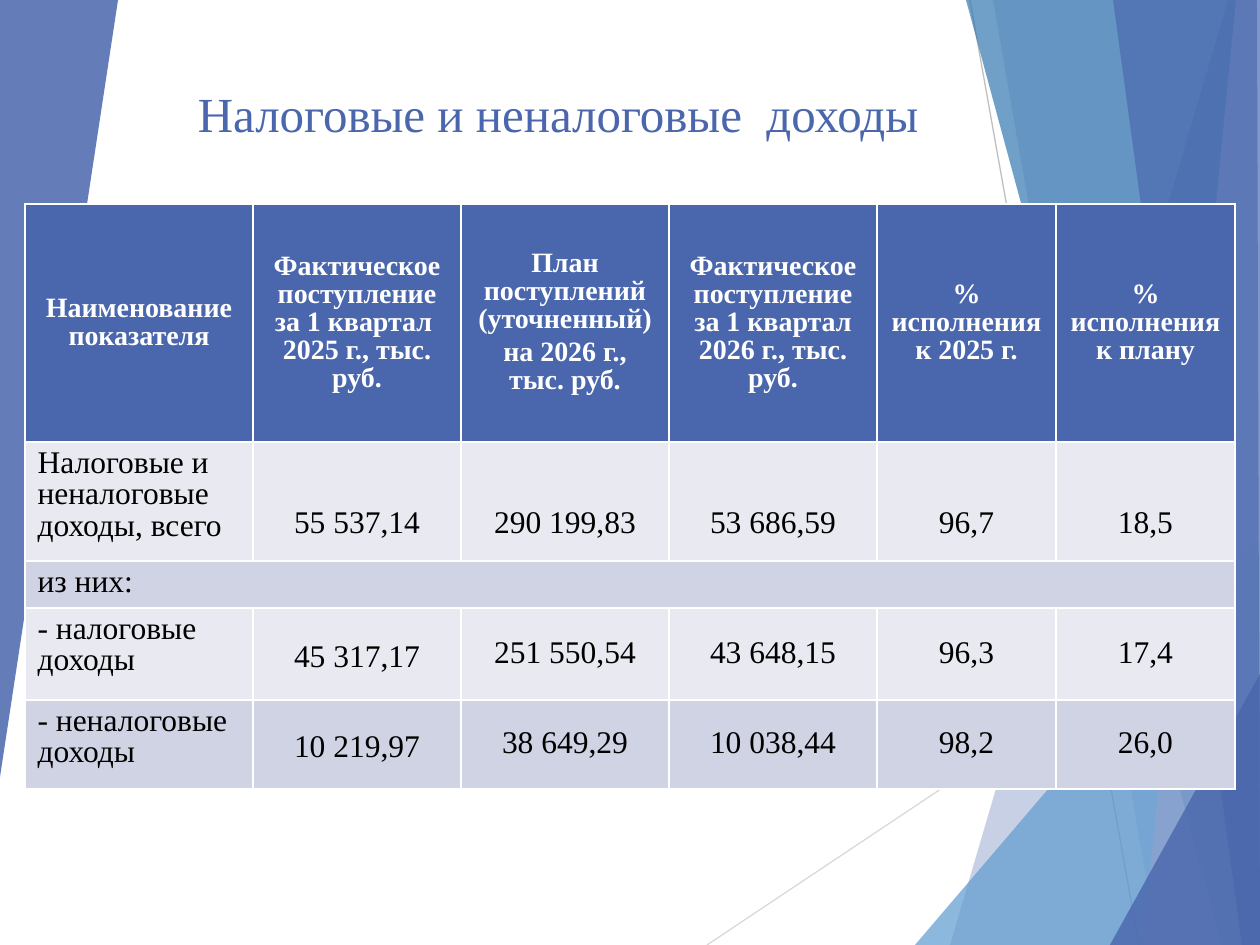
from dataclasses import dataclass

from lxml.etree import SubElement
from pptx import Presentation
from pptx.dml.color import RGBColor
from pptx.enum.shapes import MSO_CONNECTOR
from pptx.enum.text import MSO_ANCHOR, PP_ALIGN
from pptx.oxml.ns import qn
from pptx.slide import Slide
from pptx.table import _Cell
from pptx.text.text import TextFrame
from pptx.util import Emu, Pt

EMU_PER_PX = 914400 / 126
WIDTH, HEIGHT = 1260, 945
FONT = "Times New Roman"

WHITE = RGBColor(0xFF, 0xFF, 0xFF)
BLACK = RGBColor(0x00, 0x00, 0x00)
INDIGO = RGBColor(0x4A, 0x66, 0xAC)
SKY = RGBColor(0x62, 0x9D, 0xD1)
TEAL = RGBColor(0x34, 0x77, 0xB2)
LAVENDER = RGBColor(0x90, 0xA2, 0xCF)
LIGHT_GREY = RGBColor(0xD9, 0xD9, 0xD9)
GREY = RGBColor(0xBF, 0xBF, 0xBF)
BAND_LIGHT = RGBColor(0xE9, 0xEA, 0xF1)
BAND_DARK = RGBColor(0xD0, 0xD3, 0xE3)


@dataclass(frozen=True)
class Ray:
    start: tuple[int, int]
    end: tuple[int, int]
    color: RGBColor


@dataclass(frozen=True)
class Facet:
    points: tuple[tuple[int, int], ...]
    color: RGBColor
    opacity: int


@dataclass(frozen=True)
class TextStyle:
    size: int
    color: RGBColor
    bold: bool = False
    align: PP_ALIGN = PP_ALIGN.CENTER
    line_spacing: float = 0.9


@dataclass(frozen=True)
class IncomeRow:
    height: int
    label: str
    values: tuple[str, ...]
    fill: RGBColor
    anchor: MSO_ANCHOR = MSO_ANCHOR.MIDDLE
    bottom_margin: int = 6


RAYS = (
    Ray((707, 945), (1260, 576), LIGHT_GREY),
    Ray((970, 0), (1139, 945), GREY),
)
FACETS = (
    Facet(((1228, 0), (950, 945), (1260, 945), (1260, 0)), INDIGO, 30),
    Facet(((993, 0), (1158, 945), (1260, 945), (1260, 0)), INDIGO, 20),
    Facet(((915, 945), (1260, 541), (1260, 945)), SKY, 72),
    Facet(((966, 0), (1222, 945), (1260, 945), (1260, 0)), TEAL, 70),
    Facet(((1236, 0), (1143, 945), (1260, 945), (1260, 0)), LAVENDER, 70),
    Facet(((1113, 0), (1242, 945), (1260, 945), (1257, 0)), INDIGO, 65),
    Facet(((1110, 945), (1260, 674), (1260, 945)), INDIGO, 80),
    Facet(((0, 0), (118, 0), (0, 777)), INDIGO, 85),
)

TITLE_STYLE = TextStyle(28, INDIGO, line_spacing=1.0)
HEADER_STYLE = TextStyle(16, WHITE, bold=True)
LABEL_STYLE = TextStyle(18, BLACK, align=PP_ALIGN.LEFT)
VALUE_STYLE = TextStyle(18, BLACK)
FIRST_VALUE_STYLE = TextStyle(18, BLACK, line_spacing=1.15)

COLUMN_WIDTHS = (228, 208, 208, 208, 179, 179)
HEADER_HEIGHT = 238
HEADERS = (
    ("Наименование показателя",),
    ("Фактическое поступление за 1 квартал  2025 г., тыс. руб.",),
    ("План поступлений (уточненный)", "на 2026 г., тыс. руб."),
    ("Фактическое поступление за 1 квартал 2026 г., тыс. руб.",),
    ("% исполнения к 2025 г.",),
    ("% исполнения к плану",),
)
INCOME_ROWS = (
    IncomeRow(119, "Налоговые и неналоговые доходы, всего",
              ("55 537,14", "290 199,83", "53 686,59", "96,7", "18,5"),
              BAND_LIGHT, MSO_ANCHOR.BOTTOM, 21),
    IncomeRow(47, "из них:", (), BAND_DARK),
    IncomeRow(92, "- налоговые доходы",
              ("45 317,17", "251 550,54", "43 648,15", "96,3", "17,4"), BAND_LIGHT),
    IncomeRow(89, "- неналоговые доходы",
              ("10 219,97", "38 649,29", "10 038,44", "98,2", "26,0"), BAND_DARK),
)


def px(length: int) -> Emu:
    return Emu(round(length * EMU_PER_PX))


def draw_ray(slide: Slide, ray: Ray) -> None:
    connector = slide.shapes.add_connector(
        MSO_CONNECTOR.STRAIGHT, *map(px, ray.start + ray.end))
    connector.line.color.rgb = ray.color
    connector.line.width = Pt(0.75)
    SubElement(connector._element.spPr, qn("a:effectLst"))


def draw_facet(slide: Slide, facet: Facet) -> None:
    builder = slide.shapes.build_freeform(*facet.points[0], scale=EMU_PER_PX)
    builder.add_line_segments(facet.points[1:], close=True)
    shape = builder.convert_to_shape()
    shape.shadow.inherit = False
    shape.line.fill.background()
    shape.fill.solid()
    shape.fill.fore_color.rgb = facet.color
    color = shape._element.spPr.find(qn("a:solidFill"))[0]
    SubElement(color, qn("a:alpha"), val=str(facet.opacity * 1000))


def write_text(frame: TextFrame, lines: tuple[str, ...], style: TextStyle) -> None:
    frame.word_wrap = True
    for index, line in enumerate(lines):
        paragraph = frame.add_paragraph() if index else frame.paragraphs[0]
        paragraph.alignment = style.align
        paragraph.line_spacing = style.line_spacing
        if index:
            paragraph.space_before = Pt(3)
        run = paragraph.add_run()
        run.text = line
        run.font.name = FONT
        run.font.size = Pt(style.size)
        run.font.bold = style.bold
        run.font.color.rgb = style.color


def format_cell(cell: _Cell, fill: RGBColor) -> None:
    """Give the cell white borders and a solid fill."""
    properties = cell._tc.get_or_add_tcPr()
    for side in ("a:lnL", "a:lnR", "a:lnT", "a:lnB"):
        border = SubElement(properties, qn(side), w=str(Pt(1)))
        border_fill = SubElement(border, qn("a:solidFill"))
        SubElement(border_fill, qn("a:srgbClr"), val=str(WHITE))
    cell.fill.solid()
    cell.fill.fore_color.rgb = fill


def draw_title(slide: Slide) -> None:
    title = slide.shapes.add_textbox(px(154), px(76), px(808), px(73))
    title.fill.solid()
    title.fill.fore_color.rgb = WHITE
    title.text_frame.vertical_anchor = MSO_ANCHOR.BOTTOM
    write_text(title.text_frame, ("Налоговые и неналоговые  доходы",), TITLE_STYLE)


def draw_income_table(slide: Slide) -> None:
    heights = (HEADER_HEIGHT, *(row.height for row in INCOME_ROWS))
    table = slide.shapes.add_table(
        len(heights), len(COLUMN_WIDTHS), px(25), px(204),
        px(sum(COLUMN_WIDTHS)), px(sum(heights))).table
    table.first_row = table.horz_banding = False
    for column, width in zip(table.columns, COLUMN_WIDTHS):
        column.width = px(width)
    for table_row, height in zip(table.rows, heights):
        table_row.height = px(height)

    for cell, lines in zip(table.rows[0].cells, HEADERS):
        format_cell(cell, INDIGO)
        cell.vertical_anchor = MSO_ANCHOR.MIDDLE
        write_text(cell.text_frame, lines, HEADER_STYLE)

    for row_index, row in enumerate(INCOME_ROWS, start=1):
        cells = list(table.rows[row_index].cells)
        for cell in cells:
            format_cell(cell, row.fill)
        write_text(cells[0].text_frame, (row.label,), LABEL_STYLE)
        if not row.values:
            cells[0].merge(cells[-1])
        for index, (cell, value) in enumerate(zip(cells[1:], row.values)):
            cell.vertical_anchor = row.anchor
            cell.margin_bottom = px(row.bottom_margin)
            style = VALUE_STYLE if index else FIRST_VALUE_STYLE
            write_text(cell.text_frame, (value,), style)


def main() -> None:
    presentation = Presentation()
    presentation.slide_width, presentation.slide_height = px(WIDTH), px(HEIGHT)
    slide = presentation.slides.add_slide(presentation.slide_layouts[6])
    for ray in RAYS:
        draw_ray(slide, ray)
    for facet in FACETS:
        draw_facet(slide, facet)
    draw_title(slide)
    draw_income_table(slide)
    presentation.save("out.pptx")


if __name__ == "__main__":
    main()
